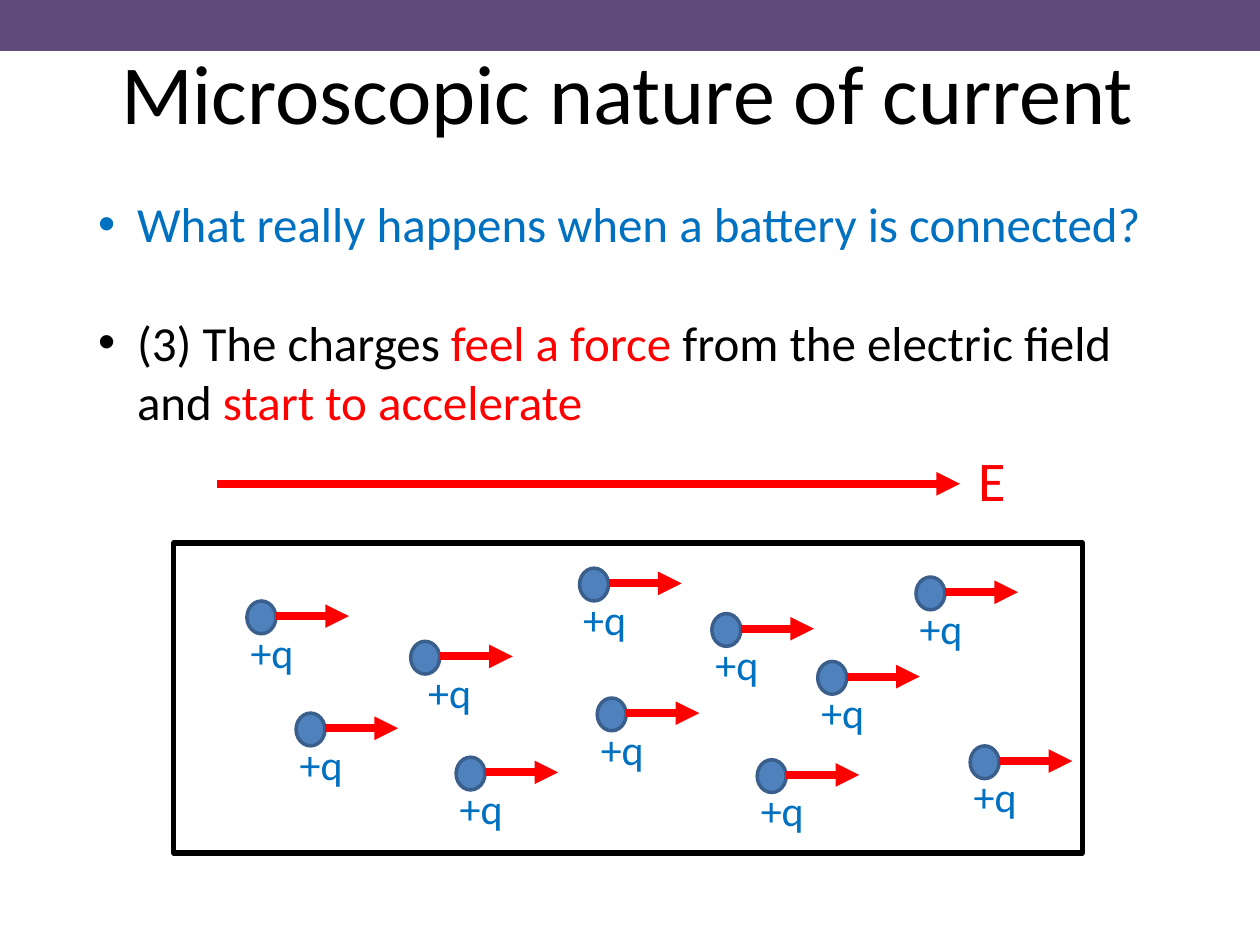
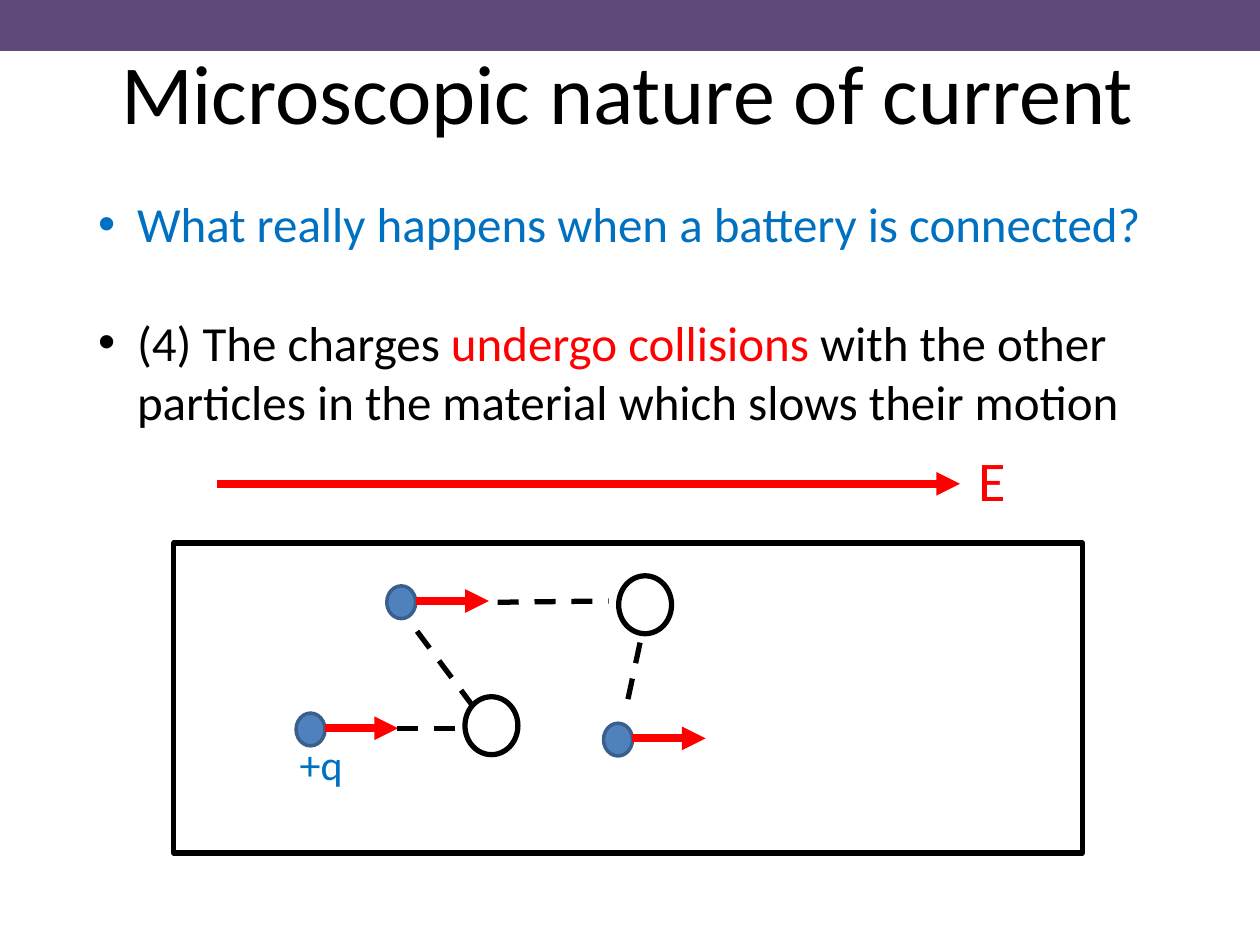
from lxml.etree import SubElement
from pptx import Presentation
from pptx.dml.color import RGBColor
from pptx.enum.dml import MSO_LINE
from pptx.enum.shapes import MSO_CONNECTOR, MSO_SHAPE
from pptx.enum.text import MSO_ANCHOR, MSO_AUTO_SIZE, PP_ALIGN
from pptx.oxml.ns import qn
from pptx.util import Inches, Pt

HUES = {"band": "604A7B", "text": "000000", "label": "0070C0", "force": "FF0000",
        "charge": "4F81BD", "rim": "3A5F8C"}
FONT = "Calibri"
TITLE = {"word_wrap": True, "auto_size": MSO_AUTO_SIZE.NONE,
         "vertical_anchor": MSO_ANCHOR.MIDDLE}
BODY = {"word_wrap": True, "auto_size": MSO_AUTO_SIZE.NONE,
        "vertical_anchor": MSO_ANCHOR.TOP}
CHARGES = [(1.96, 4.77), (2.35, 5.66), (3.26, 5.09), (3.62, 6.01), (4.6, 4.51),
           (5.65, 4.87), (4.74, 5.54), (6.01, 6.03), (7.27, 4.58), (7.7, 5.92),
           (6.49, 5.25)]
SHIFTED = (3.26, 5.09)
BOUNCES = [(3.07, 4.65), (4.79, 5.74)]
ATOMS = [(3.69, 5.53), (4.91, 4.57)]
PATHS = [(3.15, 5.78, 3.63, 5.78), (3.31, 5.01, 3.75, 5.6),
         (3.95, 4.78, 4.83, 4.77), (5.08, 5.1, 4.96, 5.66)]


def tint(hue):
    """Return the named colour."""
    return RGBColor.from_string(HUES[hue])


def apply(target, style):
    """Set each attribute in a style on the target."""
    for name, value in style.items():
        setattr(target, name, value)


def add_runs(para, runs, size):
    """Write (text, hue) runs into a paragraph."""
    for text, hue in runs:
        run = para.add_run()
        run.text = text
        apply(run.font, {"name": FONT, "size": Pt(size)})
        run.font.color.rgb = tint(hue)


def add_shape(slide, kind, box, rim, width, fill=None):
    """Draw an outlined shape, with a fill if one is named."""
    shape = slide.shapes.add_shape(kind, *map(Inches, box))
    shape.shadow.inherit = False
    if fill:
        shape.fill.solid()
        shape.fill.fore_color.rgb = tint(fill)
    else:
        shape.fill.background()
    shape.line.color.rgb = tint(rim)
    shape.line.width = Pt(width)


def add_line(slide, ends, hue, width):
    """Draw a plain straight line and return it."""
    line = slide.shapes.add_connector(MSO_CONNECTOR.STRAIGHT, *map(Inches, ends))
    line.line.color.rgb = tint(hue)
    line.line.width = Pt(width)
    SubElement(line._element.spPr, qn("a:effectLst"))
    return line


def add_arrow(slide, x, y, length):
    """Draw a red arrow pointing right."""
    line = add_line(slide, (x, y, x + length, y), "force", 4.5)
    SubElement(line._element.spPr.find(qn("a:ln")), qn("a:tailEnd"), type="triangle")


def add_dash(slide, ends):
    """Draw a dashed part of a charge's path."""
    add_line(slide, ends, "text", 3).line.dash_style = MSO_LINE.DASH


def add_text(slide, box, runs, size):
    """Add a text box of one paragraph."""
    frame = slide.shapes.add_textbox(*map(Inches, box)).text_frame
    apply(frame, BODY)
    add_runs(frame.paragraphs[0], runs, size)


def add_charge(slide, x, y):
    """Draw a charge and the arrow of its motion."""
    add_shape(slide, MSO_SHAPE.OVAL, (x, y, 0.23, 0.26), "rim", 2, "charge")
    add_arrow(slide, x + 0.23, y + 0.12, 0.58)


def add_label(slide, x, y, shift=-0.07):
    """Write +q below a charge."""
    add_text(slide, (x + shift, y + 0.15, 0.63, 0.5), [("+q", "label")], 24)


def add_title(slide, text):
    """Place and format the slide title."""
    title = slide.shapes.title
    places = zip(("left", "top", "width", "height"), (0, 0.3, 9.96, 0.84))
    apply(title, {name: Inches(value) for name, value in places})
    apply(title.text_frame, TITLE)
    para = title.text_frame.paragraphs[0]
    para.alignment = PP_ALIGN.CENTER
    add_runs(para, [(text, "text")], 48)


def add_points(slide, points):
    """Write bulleted points one line apart."""
    frame = slide.shapes.add_textbox(*map(Inches, (0.68, 1.49, 8.56, 1.99))).text_frame
    apply(frame, BODY)
    for i, runs in enumerate(points):
        para = frame.add_paragraph() if i else frame.paragraphs[0]
        para.space_before = Pt(34 if i else 0)
        props = para._p.get_or_add_pPr()
        props.set("marL", str(Inches(0.31)))
        props.set("indent", str(-Inches(0.31)))
        SubElement(props, qn("a:buFont"), typeface="Arial")
        SubElement(props, qn("a:buChar"), char="•")
        add_runs(para, runs, 28)


def add_scene(deck, step):
    """Add a slide with the band, title, points, field and conductor."""
    slide = deck.slides.add_slide(deck.slide_layouts[5])
    add_shape(slide, MSO_SHAPE.RECTANGLE, (0, 0, 10, 0.39), "band", 2, "band")
    add_title(slide, "Microscopic nature of current")
    ask = [("What really happens when a battery is connected?", "label")]
    add_points(slide, [ask, step])
    add_shape(slide, MSO_SHAPE.RECTANGLE, (1.38, 4.31, 7.21, 2.46), "text", 3)
    add_arrow(slide, 1.72, 3.84, 5.9)
    add_text(slide, (7.67, 3.49, 0.48, 0.64), [("E", "force")], 32)
    return slide


def add_force(deck):
    """Build the slide of charges that accelerate."""
    slide = add_scene(deck, [
        ("(3) The charges ", "text"), ("feel a force ", "force"),
        ("from the electric field and ", "text"), ("start to accelerate", "force")])
    for spot in CHARGES:
        add_charge(slide, *spot)
        add_label(slide, *spot, shift=0.04 if spot == SHIFTED else -0.07)


def add_crash(deck):
    """Build the slide of a charge that collides."""
    slide = add_scene(deck, [
        ("(4) The charges ", "text"), ("undergo collisions", "force"),
        (" with the other particles in the material which slows their motion", "text")])
    start = CHARGES[1]
    add_label(slide, *start)
    for spot in [start, *BOUNCES]:
        add_charge(slide, *spot)
    for x, y in ATOMS:
        add_shape(slide, MSO_SHAPE.OVAL, (x, y, 0.42, 0.46), "text", 3)
    for ends in PATHS:
        add_dash(slide, ends)


def main():
    """Build and save the deck."""
    deck = Presentation()
    apply(deck, {"slide_width": Inches(10), "slide_height": Inches(7.5)})
    add_force(deck)
    add_crash(deck)
    deck.save("out.pptx")


if __name__ == "__main__":
    main()
